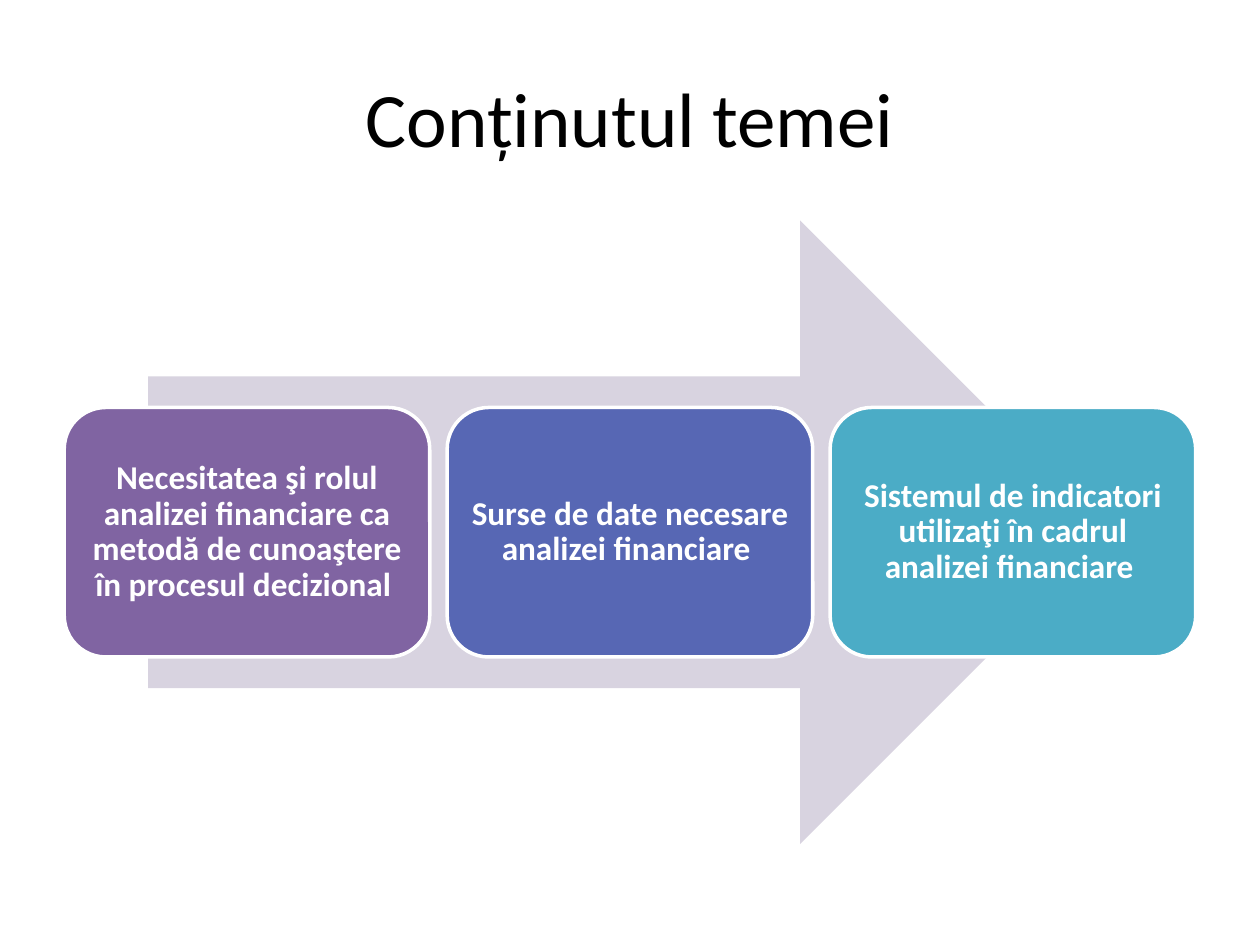
from pptx import Presentation
from pptx.dml.color import RGBColor
from pptx.enum.shapes import MSO_SHAPE
from pptx.enum.text import MSO_ANCHOR, PP_ALIGN
from pptx.util import Cm, Pt

BLACK = RGBColor(0x00, 0x00, 0x00)
WHITE = RGBColor(0xFF, 0xFF, 0xFF)
LAVENDER = RGBColor(0xD8, 0xD3, 0xE0)
PURPLE = RGBColor(0x80, 0x64, 0xA2)
INDIGO = RGBColor(0x57, 0x67, 0xB4)
TEAL = RGBColor(0x4B, 0xAC, 0xC6)

TITLE = "Conținutul temei"
TOPICS = [
    ("Necesitatea şi rolul analizei financiare ca metodă de cunoaştere în procesul decizional ", PURPLE),
    ("Surse de date necesare analizei financiare ", INDIGO),
    ("Sistemul de indicatori utilizaţi în cadrul analizei financiare ", TEAL),
]

SLIDE_WIDTH, SLIDE_HEIGHT = 25.4, 19.05
CENTER_Y = 10.73
ARROW_WIDTH, ARROW_HEIGHT = 19.43, 12.57
BOX_WIDTH, BOX_HEIGHT, BOX_GAP = 7.37, 5.03, 0.35


def write_text(shape, text, *, size, color, bold=False, line_spacing=1.0, inset=0.25):
    frame = shape.text_frame
    frame.word_wrap = True
    frame.vertical_anchor = MSO_ANCHOR.MIDDLE
    frame.margin_left = frame.margin_right = Cm(inset)
    frame.margin_top = frame.margin_bottom = Cm(min(inset, 0.2))
    paragraph = frame.paragraphs[0]
    paragraph.alignment = PP_ALIGN.CENTER
    paragraph.line_spacing = line_spacing
    run = paragraph.add_run()
    run.text = text
    run.font.name = "Calibri"
    run.font.size = Pt(size)
    run.font.bold = bold
    run.font.color.rgb = color


def add_centered_shape(slide, kind, left, width, height, fill):
    shape = slide.shapes.add_shape(
        kind, Cm(left), Cm(CENTER_Y - height / 2), Cm(width), Cm(height)
    )
    shape.shadow.inherit = False
    shape.fill.solid()
    shape.fill.fore_color.rgb = fill
    shape.line.fill.background()
    return shape


def main():
    presentation = Presentation()
    presentation.slide_width = Cm(SLIDE_WIDTH)
    presentation.slide_height = Cm(SLIDE_HEIGHT)
    slide = presentation.slides.add_slide(presentation.slide_layouts[6])

    title = slide.shapes.add_textbox(Cm(1.27), Cm(0.76), Cm(22.86), Cm(3.18))
    write_text(title, TITLE, size=44, color=BLACK)

    arrow_left = (SLIDE_WIDTH - ARROW_WIDTH) / 2
    add_centered_shape(
        slide, MSO_SHAPE.RIGHT_ARROW, arrow_left, ARROW_WIDTH, ARROW_HEIGHT, LAVENDER
    )

    pitch = BOX_WIDTH + BOX_GAP
    first_left = (SLIDE_WIDTH - len(TOPICS) * pitch + BOX_GAP) / 2
    for index, (topic, fill) in enumerate(TOPICS):
        box = add_centered_shape(
            slide, MSO_SHAPE.ROUNDED_RECTANGLE, first_left + index * pitch,
            BOX_WIDTH, BOX_HEIGHT, fill
        )
        box.line.color.rgb = WHITE
        box.line.width = Pt(2)
        write_text(box, topic, size=19, color=WHITE, bold=True, line_spacing=0.9, inset=0.2)

    presentation.save("out.pptx")


if __name__ == "__main__":
    main()
